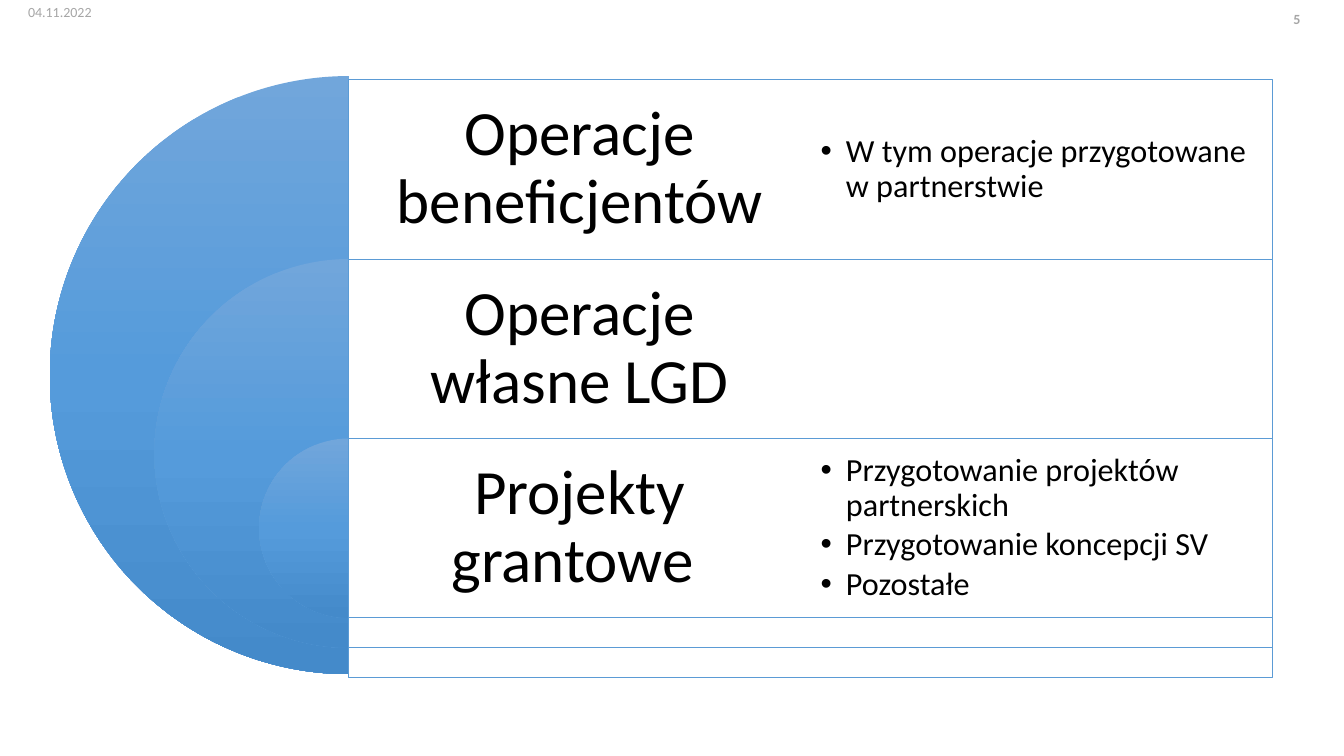
from copy import deepcopy
from dataclasses import dataclass

from lxml.etree import SubElement
from pptx import Presentation
from pptx.dml.color import RGBColor
from pptx.enum.shapes import MSO_SHAPE
from pptx.enum.text import MSO_ANCHOR, MSO_AUTO_SIZE, PP_ALIGN
from pptx.oxml.ns import qn
from pptx.util import Inches, Pt


@dataclass(frozen=True)
class Theme:
    font: str = "Calibri"
    text: str = "000000"
    muted: str = "A6A6A6"
    panel: str = "FFFFFF"
    line: str = "5B9BD5"
    gradient: tuple = ("71A6DB", "559BDB", "448ACA")
    heading: int = 45
    body: int = 23
    small: int = 10


@dataclass(frozen=True)
class Grid:
    left: float = 3.46
    top: float = 0.79
    col: float = 4.58
    row: float = 1.78

    def box(self, col, row, cols=1, rows=1):
        return [Inches(v) for v in (self.left + col * self.col, self.top + row * self.row,
                                    cols * self.col, rows * self.row)]


def write(tf, lines, *, theme, size, color, bold=False, align=PP_ALIGN.LEFT,
          anchor=MSO_ANCHOR.TOP, inset=None, spacing=1.0, after=0, bullet=None):
    tf.word_wrap = True
    tf.auto_size = MSO_AUTO_SIZE.NONE
    tf.vertical_anchor = anchor
    if inset is not None:
        tf.margin_left = tf.margin_top = tf.margin_right = tf.margin_bottom = Inches(inset)
    for i, line in enumerate(lines):
        p = tf.add_paragraph() if i else tf.paragraphs[0]
        p.alignment = align
        p.line_spacing = spacing
        p.space_before = Pt(0)
        p.space_after = Pt(after)
        if bullet:
            ppr = p._p.get_or_add_pPr()
            ppr.set("marL", str(Inches(0.25)))
            ppr.set("indent", str(-Inches(0.25)))
            SubElement(ppr, qn("a:buChar")).set("char", bullet)
        r = p.add_run()
        r.text = line
        r.font.name = theme.font
        r.font.size = Pt(size)
        r.font.bold = bold
        r.font.color.rgb = RGBColor.from_string(color)


class Slide:
    def __init__(self, prs, layout, theme, grid):
        self.s = prs.slides.add_slide(layout)
        self.size = prs.slide_width, prs.slide_height
        self.theme, self.grid = theme, grid
        title, *self.bodies = self.s.placeholders
        title._element.getparent().remove(title._element)

    def shape(self, kind, box):
        sp = self.s.shapes.add_shape(kind, *box)
        sp.shadow.inherit = False
        return sp

    def half_disc(self, row, rows):
        x, y, _, d = self.grid.box(0, row, rows=rows)
        sp = self.shape(MSO_SHAPE.PIE, (x - d // 2, y, d, d))
        sp.adjustments[0], sp.adjustments[1] = 54, 162
        sp.line.fill.background()
        sp.fill.gradient()
        sp.fill.gradient_angle = 270
        gs = sp.fill.gradient_stops[0]._gs
        gs.addnext(deepcopy(gs))
        for i, (stop, color) in enumerate(zip(sp.fill.gradient_stops, self.theme.gradient)):
            stop.position = i / 2
            stop.color.rgb = RGBColor.from_string(color)

    def panel(self, row, rows):
        sp = self.shape(MSO_SHAPE.RECTANGLE, self.grid.box(0, row, 2, rows))
        sp.fill.solid()
        sp.fill.fore_color.rgb = RGBColor.from_string(self.theme.panel)
        color = sp._element.spPr.find(qn("a:solidFill")).find(qn("a:srgbClr"))
        SubElement(color, qn("a:alpha")).set("val", "90000")
        sp.line.color.rgb = RGBColor.from_string(self.theme.line)
        sp.line.width = Pt(0.5)

    def heading(self, row, text):
        sp = self.s.shapes.add_textbox(*self.grid.box(0, row))
        write(sp.text_frame, [text], theme=self.theme, size=self.theme.heading,
              color=self.theme.text, align=PP_ALIGN.CENTER, anchor=MSO_ANCHOR.MIDDLE,
              inset=0.19, spacing=0.9, after=15.75)

    def bullets(self, row, lines):
        sp = self.bodies.pop(0)
        sp.left, sp.top, sp.width, sp.height = self.grid.box(1, row)
        self.s.shapes._spTree.append(sp._element)
        write(sp.text_frame, lines, theme=self.theme, size=self.theme.body,
              color=self.theme.text, anchor=MSO_ANCHOR.MIDDLE, inset=0.1,
              spacing=0.9, after=3.45, bullet="•")

    def label(self, text, x, y, w, h, **style):
        width, height = self.size
        sp = self.s.shapes.add_textbox(int(x * width), int(y * height),
                                       int(w * width), int(h * height))
        write(sp.text_frame, [text], theme=self.theme, size=self.theme.small,
              color=self.theme.muted, **style)


OPERATIONS = [
    ("Operacje beneficjentów", ["W tym operacje przygotowane w partnerstwie"]),
    ("Operacje własne LGD", []),
    ("Projekty grantowe ", ["Przygotowanie projektów partnerskich",
                            "Przygotowanie koncepcji SV", "Pozostałe"]),
]


def main():
    prs = Presentation()
    prs.slide_width, prs.slide_height = Inches(13.33), Inches(7.5)
    slide = Slide(prs, prs.slide_layouts.get_by_name("Two Content"), Theme(), Grid())
    slide.label("04.11.2022", 0.0135, -0.0013, 0.225, 0.053)
    slide.label("5", 0.75, 0.0067, 0.225, 0.053, bold=True, align=PP_ALIGN.RIGHT)
    last = len(OPERATIONS) - 1
    for row, (name, _) in enumerate(OPERATIONS):
        rows = 1 + (last - row) * 7 / 6
        slide.half_disc(row if row else -0.02, rows)
        slide.panel(row, rows)
        slide.heading(row, name)
    for row, (_, details) in enumerate(OPERATIONS):
        if details:
            slide.bullets(row, details)
    prs.save("out.pptx")


if __name__ == "__main__":
    main()
